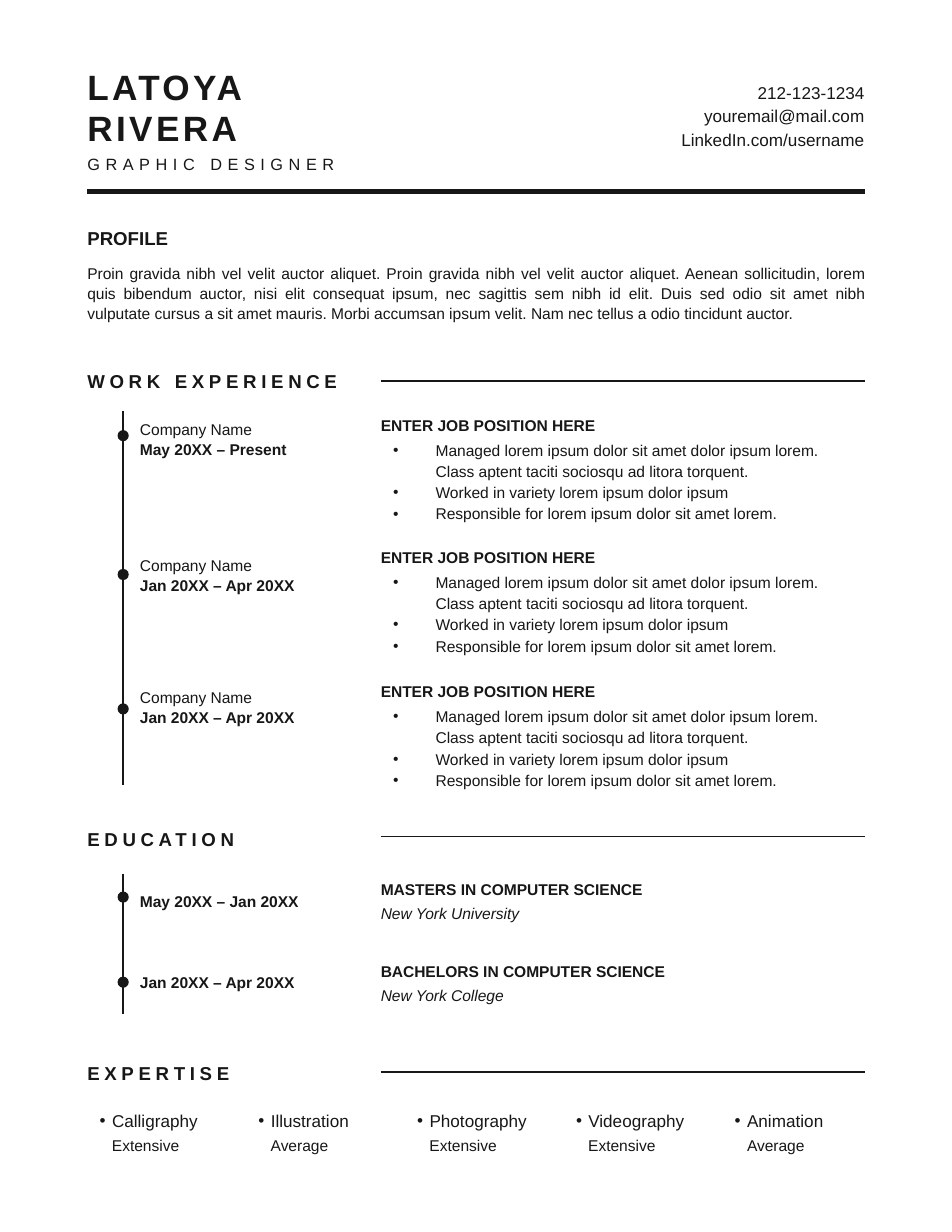
import pptx
import pptx.util
import pptx.dml.color
import pptx.enum.shapes
import pptx.enum.text
import pptx.oxml.ns
import lxml.etree

Inches, Pt = pptx.util.Inches, pptx.util.Pt
ALIGN = pptx.enum.text.PP_ALIGN
COLORS = {"ink": "181717", "paper": "FFFFFF"}
INK = pptx.dml.color.RGBColor.from_string(COLORS["ink"])
LEFT, RIGHT, DETAIL, TIMELINE = 0.78, 7.72, 3.4, 1.1

deck = pptx.Presentation()
deck.slide_width, deck.slide_height = Inches(8.5), Inches(11)
page = deck.slides.add_slide(deck.slide_layouts[1])
page.background.fill.solid()
page.background.fill.fore_color.rgb = pptx.dml.color.RGBColor.from_string(COLORS["paper"])


def write(place, lines, size=10, style="", spacing=1.07, tracking=0, align=ALIGN.LEFT,
          inset=0.05, bullet=None, box=None):
    left, top, width, height = (Inches(value) for value in place)
    if box is None:
        box = page.shapes.add_textbox(left, top, width, height)
    box.left, box.top, box.width, box.height = left, top, width, height
    frame = box.text_frame
    frame.word_wrap = True
    frame.auto_size = pptx.enum.text.MSO_AUTO_SIZE.NONE
    frame.vertical_anchor = pptx.enum.text.MSO_ANCHOR.TOP
    frame.margin_left = frame.margin_right = 0
    frame.margin_top = frame.margin_bottom = Inches(inset)
    for index, line in enumerate(lines):
        text, look = line if isinstance(line, tuple) else (line, style)
        para = frame.paragraphs[0] if index == 0 else frame.add_paragraph()
        if bullet:
            properties = para._p.get_or_add_pPr()
            properties.set("marL", str(Inches(bullet[0])))
            properties.set("indent", str(Inches(-bullet[1])))
            lxml.etree.SubElement(properties, pptx.oxml.ns.qn("a:buFont")).set("typeface", "Arial")
            lxml.etree.SubElement(properties, pptx.oxml.ns.qn("a:buChar")).set("char", "•")
        para.alignment = align
        para.line_spacing = spacing
        para.space_before = para.space_after = Pt(0)
        span = para.add_run()
        span.text = text
        span.font.name = "Arial"
        span.font.size = Pt(size)
        span.font.bold = look == "bold"
        span.font.italic = look == "italic"
        span.font.color.rgb = INK
        if tracking:
            span._r.get_or_add_rPr().set("spc", str(round(tracking * 100)))


def rule(start_x, start_y, end_x, end_y, weight=1):
    line = page.shapes.add_connector(
        pptx.enum.shapes.MSO_CONNECTOR.STRAIGHT,
        Inches(start_x), Inches(start_y), Inches(end_x), Inches(end_y))
    line.line.color.rgb = INK
    line.line.width = Pt(weight)
    lxml.etree.SubElement(line._element.spPr, pptx.oxml.ns.qn("a:effectLst"))


write((LEFT, 0.6, 3.29, 0.73), ["LATOYA", "RIVERA"], 22.6, "bold", Pt(26), 2.2,
      inset=0, box=page.shapes.title)
write((LEFT, 1.37, 3.29, 0.18), ["GRAPHIC DESIGNER"], 10.5, spacing=Pt(13.2),
      tracking=3.6, inset=0)
write((5.61, 0.66, 2.11, 0.76),
      ["212-123-1234", "youremail@mail.com", "LinkedIn.com/username"],
      11, spacing=1.14, align=ALIGN.RIGHT)
rule(LEFT, 1.71, RIGHT, 1.71, 3)

write((LEFT, 1.96, 1.61, 0.3), ["PROFILE"], 12, "bold")
write((LEFT, 2.3, RIGHT - LEFT, 0.64), [
    "Proin gravida nibh vel velit auctor aliquet. Proin gravida nibh vel velit auctor aliquet. "
    "Aenean sollicitudin, lorem quis bibendum auctor, nisi elit consequat ipsum, nec sagittis "
    "sem nibh id elit. Duis sed odio sit amet nibh vulputate cursus a sit amet mauris. Morbi "
    "accumsan ipsum velit. Nam nec tellus a odio tincidunt auctor."], align=ALIGN.JUSTIFY)

sections = [("WORK EXPERIENCE", 3.24, 3.4), ("EDUCATION", 7.33, 7.47), ("EXPERTISE", 9.42, 9.57)]
for heading, top, rule_y in sections:
    write((LEFT, top, 2.7, 0.3), [heading], 12, "bold", tracking=3)
    rule(DETAIL, rule_y, RIGHT, rule_y)

for top, bottom, dots in [(3.67, 7.01, (3.84, 5.08, 6.28)), (7.8, 9.05, (7.96, 8.72))]:
    rule(TIMELINE, top, TIMELINE, bottom)
    for dot_top in dots:
        dot = page.shapes.add_shape(
            pptx.enum.shapes.MSO_SHAPE.OVAL,
            Inches(TIMELINE - 0.05), Inches(dot_top), Inches(0.1), Inches(0.1))
        dot.shadow.inherit = False
        dot.fill.solid()
        dot.fill.fore_color.rgb = INK
        dot.line.fill.background()

duties = [
    "Managed lorem ipsum dolor sit amet dolor ipsum lorem. "
    "Class aptent taciti sociosqu ad litora torquent.",
    "Worked in variety lorem ipsum dolor ipsum",
    "Responsible for lorem ipsum dolor sit amet lorem.",
]
jobs = [
    ("May 20XX – Present", 3.69, 3.65, 3.86, page.placeholders[1]),
    ("Jan 20XX – Apr 20XX", 4.9, 4.83, 5.04, None),
    ("Jan 20XX – Apr 20XX", 6.08, 6.03, 6.24, None),
]
for dates, company_top, position_top, duties_top, holder in jobs:
    write((1.25, company_top, 1.9, 0.46), ["Company Name", (dates, "bold")])
    write((DETAIL, position_top, 3.4, 0.27), ["ENTER JOB POSITION HERE"], style="bold")
    write((3.51, duties_top, 3.87, 0.87), duties, spacing=1.14, bullet=(0.38, 0.38), box=holder)

degrees = [
    ("May 20XX – Jan 20XX", "MASTERS IN COMPUTER SCIENCE", "New York University", 7.8),
    ("Jan 20XX – Apr 20XX", "BACHELORS IN COMPUTER SCIENCE", "New York College", 8.53),
]
for dates, degree, school, top in degrees:
    write((1.25, top + 0.1, 1.9, 0.27), [dates], style="bold")
    write((DETAIL, top, 3.4, 0.27), [degree], style="bold")
    write((DETAIL, top + 0.21, 3.4, 0.27), [school], style="italic")

skills = [("Calligraphy", "Extensive"), ("Illustration", "Average"), ("Photography", "Extensive"),
          ("Videography", "Extensive"), ("Animation", "Average")]
skill_step = (6.45 - LEFT) / (len(skills) - 1)
for index, (skill, level) in enumerate(skills):
    left = LEFT + index * skill_step
    write((left, 9.91, 1.15, 0.18), [skill], 11, spacing=Pt(13.2), inset=0, bullet=(0.22, 0.11))
    write((left + 0.22, 10.18, 0.93, 0.13), [level], spacing=Pt(9.2), inset=0)

deck.save("out.pptx")
